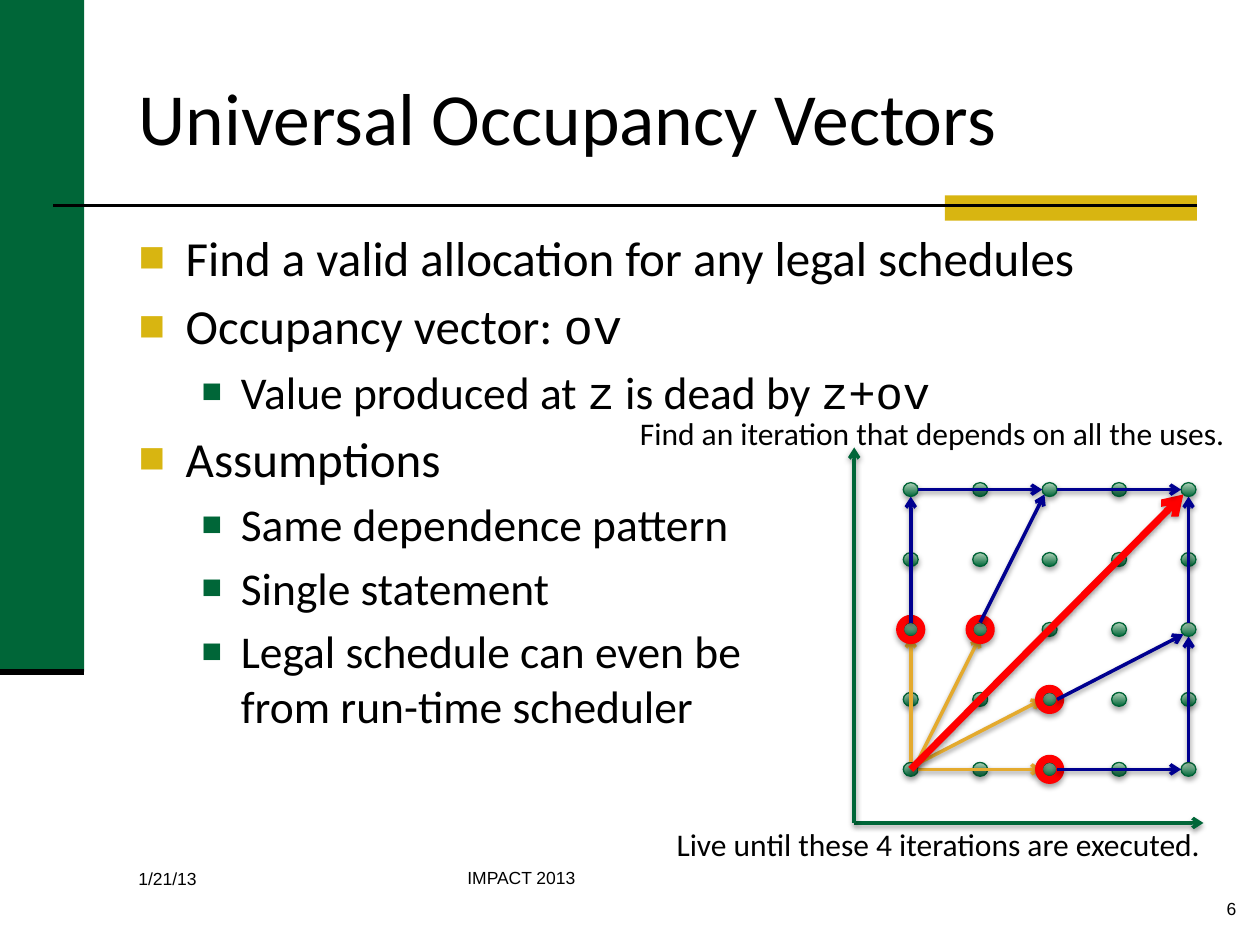
"""Build the slide on universal occupancy vectors."""
import dataclasses
import lxml.etree
import pptx
import pptx.dml.color
import pptx.enum.shapes
import pptx.enum.text
import pptx.oxml.ns
import pptx.util

Cm, Pt = pptx.util.Cm, pptx.util.Pt
SHAPE = pptx.enum.shapes.MSO_SHAPE
ALIGN = pptx.enum.text.PP_ALIGN
ANCHOR = pptx.enum.text.MSO_ANCHOR


@dataclasses.dataclass(frozen=True)
class Theme:
    black: str = "000000"
    green: str = "006638"
    edge: str = "006437"
    mint: str = "B1D2B9"
    gold: str = "D8B511"
    amber: str = "E4AA2E"
    red: str = "FF0000"
    navy: str = "000090"
    sans: str = "Calibri"
    mono: str = "Courier New"
    foot: str = "Arial"
    title: int = 42
    levels: tuple = (28, 26)
    note: int = 18
    small: int = 10


THEME = Theme()

POINTS = (
    (0, "Find a valid allocation for any legal schedules"),
    (0, "Occupancy vector: `ov`"),
    (1, "Value produced at `z` is dead by `z+ov`"),
    (0, "Assumptions"),
    (1, "Same dependence pattern"),
    (1, "Single statement"),
    (1, "Legal schedule can even be\nfrom run-time scheduler"),
)
BULLETS = (
    (THEME.gold, 90, 0.95, 0.95),
    (THEME.green, 75, 2.06, 0.79),
)

LEFT, BASE, STEP_X, STEP_Y = 18.36, 15.51, 1.4, 1.41
DOT_W, DOT_H, RING = 0.3, 0.28, 0.43
SIDES = {"C": (0, 0), "N": (0, -0.5), "S": (0, 0.5), "E": (0.5, 0),
         "W": (-0.5, 0), "NE": (0.35, -0.35), "SW": (-0.35, 0.35)}
USES = ((0, 2), (1, 2), (2, 1), (2, 0))
READS = (
    ((0, 0, "E"), (2, 0, "W")),
    ((0, 0, "N"), (0, 2, "S")),
    ((0, 0, "NE"), (1, 2, "S")),
    ((0, 0, "NE"), (2, 1, "W")),
)
STEPS = (
    ((2, 1, "E"), (4, 2, "SW")),
    ((2, 0, "E"), (4, 0, "W")),
    ((2, 4, "E"), (4, 4, "W")),
    ((0, 4, "E"), (2, 4, "W")),
    ((0, 2, "N"), (0, 4, "S")),
    ((4, 2, "N"), (4, 4, "S")),
    ((4, 0, "N"), (4, 2, "S")),
    ((1, 2, "N"), (2, 4, "SW")),
)


def paint(code):
    """Turn a hex code into a colour."""
    return pptx.dml.color.RGBColor.from_string(code)


def node(parent, tag, **attrs):
    """Add an XML element with attributes."""
    return lxml.etree.SubElement(parent, pptx.oxml.ns.qn(tag), attrs)


def shade(item, alpha=0, drop=1.8):
    """Give an item a soft drop shadow, or none when alpha is zero."""
    effects = node(item._element.spPr, "a:effectLst")
    if alpha:
        shadow = node(effects, "a:outerShdw", blurRad=str(Pt(3.1)),
                      dist=str(Pt(drop)), dir="5400000", rotWithShape="0")
        color = node(shadow, "a:srgbClr", val=THEME.black)
        node(color, "a:alpha", val=str(alpha * 1000))


def write(para, text, size, font=THEME.sans, align=ALIGN.LEFT):
    """Write text in a paragraph, with backticks around monospaced parts."""
    para.alignment = align
    for spot, part in enumerate(text.split("`")):
        for row, line in enumerate(part.split("\n")):
            if row:
                para.add_line_break()
            if line:
                run = para.add_run()
                run.text = line
                run.font.size = Pt(size)
                run.font.name = THEME.mono if spot % 2 else font
                run.font.color.rgb = paint(THEME.black)


def place(item, x, y, w, h):
    """Move and size an item."""
    item.left, item.top, item.width, item.height = map(Cm, (x, y, w, h))


def label(slide, box, text, size, **style):
    """Add a text box with one paragraph."""
    frame = slide.shapes.add_textbox(*map(Cm, box)).text_frame
    frame.word_wrap = True
    write(frame.paragraphs[0], text, size, **style)


def block(slide, box, color):
    """Add a plain filled rectangle."""
    item = slide.shapes.add_shape(SHAPE.RECTANGLE, *map(Cm, box))
    item.fill.solid()
    item.fill.fore_color.rgb = paint(color)
    item.line.fill.background()
    shade(item)


def stroke(slide, start, end, color, width, arrow=True):
    """Add a straight line, by default a shadowed arrow."""
    item = slide.shapes.add_connector(
        pptx.enum.shapes.MSO_CONNECTOR.STRAIGHT, *map(Cm, start + end))
    item.line.color.rgb = paint(color)
    item.line.width = Pt(width)
    if arrow:
        node(item.line._get_or_add_ln(), "a:tailEnd", type="arrow")
    shade(item, 38 if arrow else 0, 1.6)


def spot(col, row, side="C"):
    """Find a point on a grid dot."""
    dx, dy = SIDES[side]
    return LEFT + col * STEP_X + dx * DOT_W, BASE - row * STEP_Y + dy * DOT_H


def disc(slide, col, row, w, h, color, width):
    """Add an unfilled ellipse centred on a grid place."""
    x, y = spot(col, row)
    box = (x - w / 2, y - h / 2, w, h)
    item = slide.shapes.add_shape(SHAPE.OVAL, *map(Cm, box))
    item.fill.background()
    item.line.color.rgb = paint(color)
    item.line.width = Pt(width)
    shade(item, 35)
    return item


def dot(slide, col, row):
    """Add one iteration dot."""
    fill = disc(slide, col, row, DOT_W, DOT_H, THEME.edge, 0.75).fill
    fill.gradient()
    fill.gradient_angle = 90
    for stop, color in zip(fill.gradient_stops, (THEME.green, THEME.mint)):
        stop.color.rgb = paint(color)


def bullet(para, level):
    """Set the indent and square bullet of a level."""
    color, scale, margin, hang = BULLETS[level]
    para.level = level
    props = para._p.get_or_add_pPr()
    props.set("marL", str(Cm(margin)))
    props.set("indent", str(-Cm(hang)))
    node(node(props, "a:buClr"), "a:srgbClr", val=color)
    node(props, "a:buSzPct", val=str(scale * 1000))
    node(props, "a:buFont", typeface=THEME.foot)
    node(props, "a:buChar", char="■")


def words(slide):
    """Fill the title and the list."""
    title, body = slide.placeholders
    place(title, 2.54, 0.76, 21.59, 3.18)
    place(body, 2.54, 4.45, 21.59, 12.57)
    for item, anchor in ((title, ANCHOR.MIDDLE), (body, ANCHOR.TOP)):
        item.text_frame.auto_size = pptx.enum.text.MSO_AUTO_SIZE.NONE
        item.text_frame.vertical_anchor = anchor
    write(title.text_frame.paragraphs[0], "Universal Occupancy Vectors",
          THEME.title)
    frame = body.text_frame
    for rank, (level, text) in enumerate(POINTS):
        para = frame.add_paragraph() if rank else frame.paragraphs[0]
        size = THEME.levels[level]
        bullet(para, level)
        para.space_before = Pt(size * 0.2 if rank else 0)
        write(para, text, size)


def frame(slide):
    """Draw the bars and rules around the content."""
    block(slide, (0, 0, 1.7, 13.54), THEME.green)
    block(slide, (19.05, 3.94, 5.08, 0.51), THEME.gold)
    stroke(slide, (1.07, 4.14), (24.13, 4.14), THEME.black, 1.5, False)
    stroke(slide, (0, 13.54), (1.7, 13.54), THEME.black, 3.5, False)


def graph(slide):
    """Draw the iteration grid with its vectors."""
    for col in range(5):
        for row in range(5):
            dot(slide, col, row)
    for end in ((24.26, 16.59), (17.22, 9.02)):
        stroke(slide, (17.22, 16.59), end, THEME.green, 2)
    for start, end in READS:
        stroke(slide, spot(*start), spot(*end), THEME.amber, 2)
    stroke(slide, spot(0, 0), spot(4, 4, "SW"), THEME.red, 4)
    for col, row in USES:
        disc(slide, col, row, RING, RING, THEME.red, 4.5)
    for start, end in STEPS:
        stroke(slide, spot(*start), spot(*end), THEME.navy, 2)


def main():
    """Build and save the slide."""
    deck = pptx.Presentation()
    deck.slide_width, deck.slide_height = Cm(25.4), Cm(19.05)
    slide = deck.slides.add_slide(deck.slide_layouts[1])
    frame(slide)
    words(slide)
    graph(slide)
    label(slide, (13.39, 16.51, 12, 1.02),
          "Live until these 4 iterations are executed.", THEME.note)
    label(slide, (12.65, 8.23, 12.7, 1.02),
          "Find an iteration that depends on all the uses.", THEME.note)
    for box, text, align in (
            ((2.54, 17.37, 5.51, 1.27), "1/21/13", ALIGN.LEFT),
            ((6.38, 17.35, 8.26, 1.27), "IMPACT 2013", ALIGN.CENTER),
            ((19.89, 17.98, 5.28, 0.64), "6", ALIGN.RIGHT)):
        label(slide, box, text, THEME.small, font=THEME.foot, align=align)
    deck.save("out.pptx")


if __name__ == "__main__":
    main()
